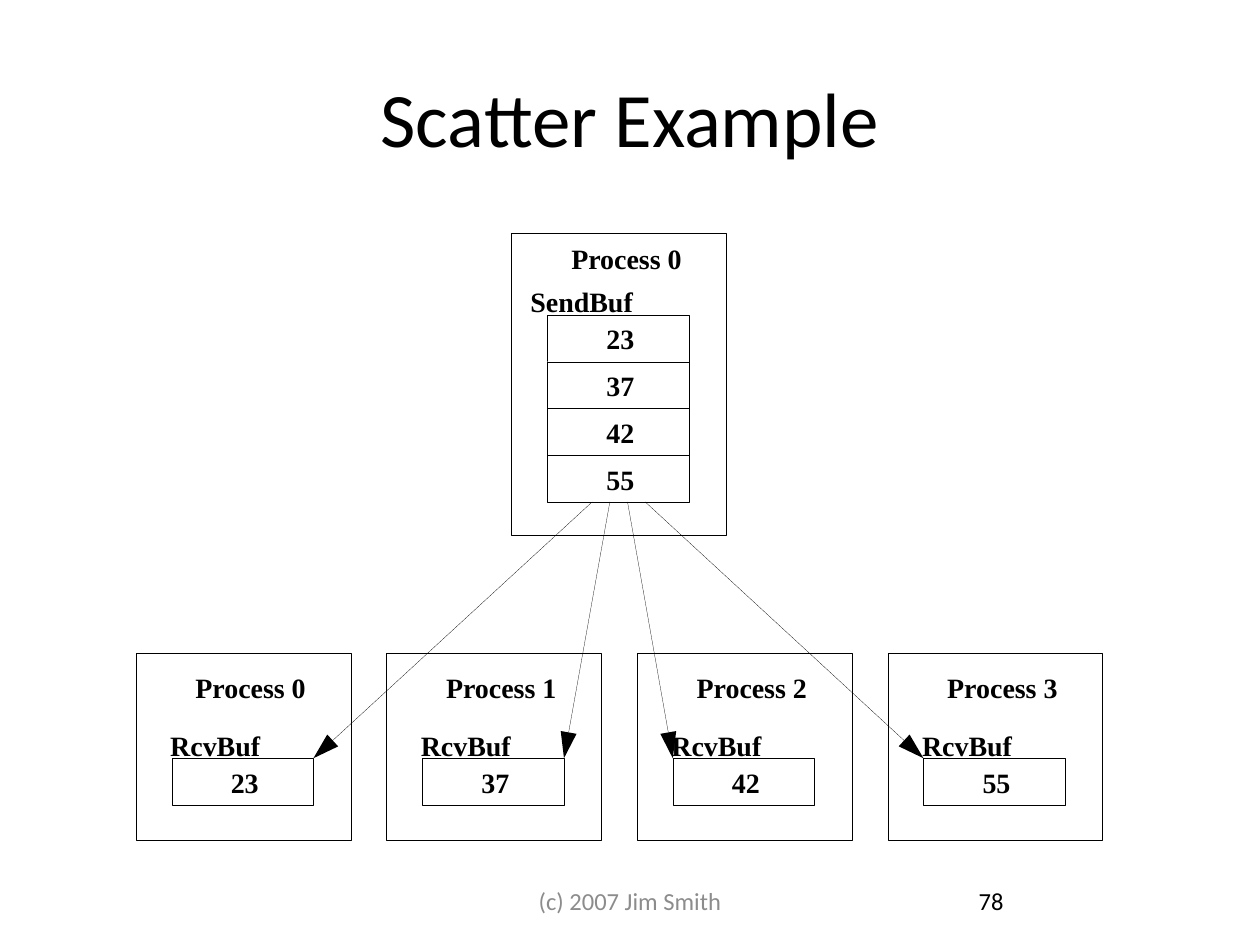
"""Build a slide showing how a scatter sends one buffer to four processes."""
from math import hypot

from pptx import Presentation
from pptx.dml.color import RGBColor
from pptx.enum.shapes import MSO_CONNECTOR as Link, MSO_SHAPE as Kind
from pptx.enum.text import MSO_ANCHOR as Anchor, PP_ALIGN as Align
from pptx.oxml.ns import qn
from pptx.util import Pt
from lxml.etree import SubElement

TITLE = "Scatter Example"
FOOT = "(c) 2007 Jim Smith"
PAGE = "78"
ROOT = "Process 0"
SEND, RECV = "SendBuf", "RcvBuf"
NODES = [("Process 0", "23"), ("Process 1", "37"),
         ("Process 2", "42"), ("Process 3", "55")]

BLACK = RGBColor(0, 0, 0)
WHITE = RGBColor(255, 255, 255)
GREY = RGBColor(0x8C, 0x8C, 0x8C)
SANS, SERIF = "Calibri", "Times New Roman"

HAIR = 0.13
BOX_W, CELL_W, CELL_H, INSET = 122.8, 81, 26.7, 20.4
ROOT_X, ROOT_Y, ROOT_H = 292.3, 133.2, 172.8
SEND_Y = 180
ROW_X, ROW_Y, ROW_H, STEP = 77.7, 373.2, 107, 143.2
RECV_Y = 433.3
TAIL_X, TAIL_GAP = 338.4, 10.1
HEAD_LEN, HEAD_HALF = 15, 4.6

deck = Presentation()
deck.slide_width, deck.slide_height = Pt(720), Pt(540)
slide = deck.slides.add_slide(deck.slide_layouts[6])
shapes = slide.shapes


def write(text, x, y, w, h, size, font, color, align=Align.LEFT):
    box = shapes.add_textbox(Pt(x), Pt(y), Pt(w), Pt(h))
    frame = box.text_frame
    frame.text = text
    frame.word_wrap = True
    frame.vertical_anchor = Anchor.MIDDLE
    para = frame.paragraphs[0]
    para.alignment = align
    face = para.runs[0].font
    face.size, face.name = Pt(size), font
    face.color.rgb = color
    return frame


def label(text, x, y, w):
    frame = write(text, x, y, w, 19.4, 16, SERIF, BLACK)
    frame.word_wrap = False
    frame.vertical_anchor = Anchor.TOP
    frame.margin_left = frame.margin_right = 0
    frame.margin_top = frame.margin_bottom = 0
    frame.paragraphs[0].runs[0].font.bold = True


def rect(x, y, w, h):
    box = shapes.add_shape(Kind.RECTANGLE, Pt(x), Pt(y), Pt(w), Pt(h))
    box.shadow.inherit = False
    box.fill.solid()
    box.fill.fore_color.rgb = WHITE
    box.line.color.rgb = BLACK
    box.line.width = Pt(HAIR)


def cell(text, x, y):
    rect(x, y, CELL_W, CELL_H)
    label(text, x + 33.8, y + 4, 16)


def arrow(x1, y1, x2, y2):
    span = hypot(x2 - x1, y2 - y1)
    ux, uy = (x2 - x1) / span, (y2 - y1) / span
    bx, by = x2 - HEAD_LEN * ux, y2 - HEAD_LEN * uy
    line = shapes.add_connector(Link.STRAIGHT, Pt(x1), Pt(y1), Pt(bx), Pt(by))
    line.line.color.rgb = BLACK
    line.line.width = Pt(HAIR)
    SubElement(line._element.spPr, qn("a:effectLst"))
    dx, dy = HEAD_HALF * uy, -HEAD_HALF * ux
    pen = shapes.build_freeform(Pt(x2), Pt(y2))
    pen.add_line_segments([(Pt(bx + dx), Pt(by + dy)),
                           (Pt(bx - dx), Pt(by - dy))])
    head = pen.convert_to_shape()
    head.shadow.inherit = False
    head.fill.solid()
    head.fill.fore_color.rgb = BLACK
    head.line.fill.background()


write(TITLE, 36, 21.6, 648, 90, 44, SANS, BLACK, Align.CENTER)

rect(ROOT_X, ROOT_Y, BOX_W, ROOT_H)
label(ROOT, ROOT_X + 34.2, ROOT_Y + 5, 64)
label(SEND, ROOT_X + 10.8, SEND_Y - 17.3, 59)
for i, (name, value) in enumerate(NODES):
    cell(value, ROOT_X + INSET, SEND_Y + i * CELL_H)

for i, (name, value) in enumerate(NODES):
    x = ROW_X + i * STEP
    rect(x, ROW_Y, BOX_W, ROW_H)
    label(name, x + 34, ROW_Y + 10, 64)
    cell(value, x + INSET, RECV_Y)
    label(RECV, x + INSET - 0.8, RECV_Y - 17.2, 52)

for i in range(len(NODES)):
    side = CELL_W if i < len(NODES) / 2 else 0
    arrow(TAIL_X + i * TAIL_GAP, SEND_Y + len(NODES) * CELL_H,
          ROW_X + i * STEP + INSET + side, RECV_Y)

page = write(PAGE, 516, 500.5, 168, 28.8, 14, SANS, BLACK)
page.margin_left = Pt(43.2)
write(FOOT, 246, 500.5, 228, 28.8, 14, SANS, GREY, Align.CENTER)

deck.save("out.pptx")
